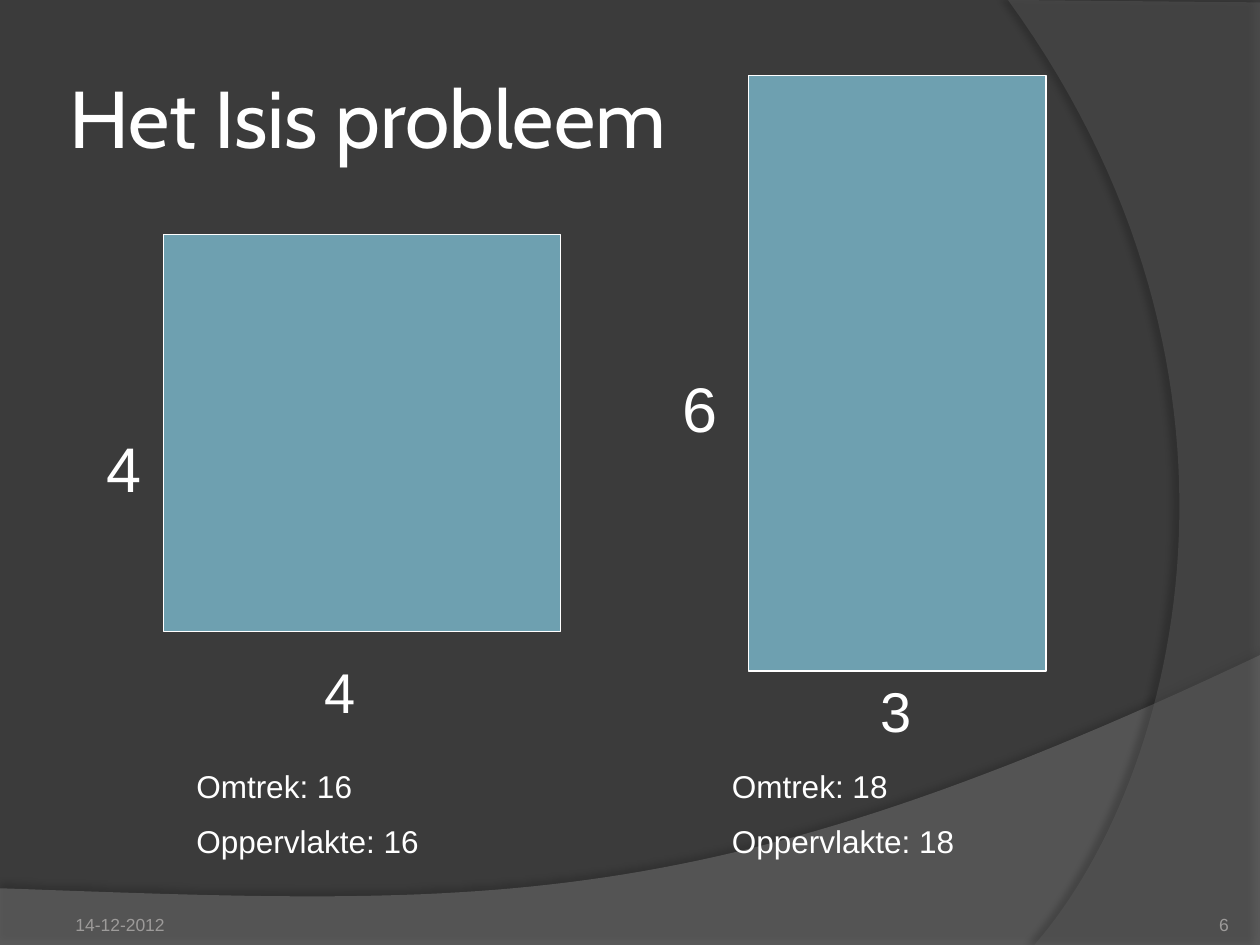
from dataclasses import dataclass

import pptx
import pptx.dml.color
import pptx.enum.shapes
import pptx.enum.text
import pptx.oxml
import pptx.oxml.ns
import pptx.util

Pt = pptx.util.Pt
RGB = pptx.dml.color.RGBColor.from_string
Anchor = pptx.enum.text.MSO_ANCHOR
Align = pptx.enum.text.PP_ALIGN
Point = tuple[float, float]


@dataclass(frozen=True)
class Theme:
    background: str = "3B3B3B"
    hill: str = "7F7F7F"
    arc: str = "5E5E5E"
    rect: str = "6EA0B0"
    text: str = "FFFFFF"
    muted: str = "9D9B9A"
    title_font: str = "Cabin"
    body_font: str = "Arial"
    title: float = 46
    side: float = 36
    base: float = 32
    body: float = 18
    footer: float = 10


@dataclass(frozen=True)
class Wave:
    color: str
    opacity: int
    start: Point
    corners: list[Point]
    controls: tuple[Point, Point]
    end: Point
    shadow_opacity: int
    shadow_distance: float
    shadow_angle: int


@dataclass(frozen=True)
class Label:
    lines: list[str]
    left: float
    top: float
    width: float
    height: float
    size: float
    color: str
    font: str
    insets: tuple[float, float, float, float] = (7.2, 3.6, 7.2, 3.6)
    anchor: Anchor = Anchor.TOP
    align: Align = Align.LEFT


@dataclass(frozen=True)
class Rectangle:
    """A rectangle in units, with the places of its labels in points."""
    width: int
    height: int
    left: float
    top: float
    base_label: Point
    side_label: Point
    facts_left: float


THEME = Theme()
WIDTH, HEIGHT = 720, 540
UNIT = 56.7  # one unit of the rectangles
FACTS_TOP = 434.9
PARAGRAPH_GAP = 9.5
CURVE_STEPS = 60

WAVES = [
    Wave(THEME.hill, 45, (0, 507.6), [(0, 540.5), (WIDTH, 540.5), (WIDTH, 374.4)],
         ((402.5, 524.9), (281.5, 517.7)), (0, 507.6), 35, 3.5, 270),
    Wave(THEME.arc, 40, (WIDTH, 1.4), [(WIDTH, HEIGHT), (591.1, HEIGHT)],
         ((673.2, 445.7), (733, 216)), (576, 0), 45, 4, 180),
]

RECTANGLES = [
    Rectangle(4, 4, 93.6, 133.9, (178.6, 372.2), (54, 241.9), 105.1),
    Rectangle(3, 6, 427.7, 43.2, (496.1, 383), (383, 207.4), 411.1),
]


def bezier(start: Point, wave: Wave) -> list[Point]:
    points = (start, *wave.controls, wave.end)
    curve = []
    for step in range(1, CURVE_STEPS + 1):
        t = step / CURVE_STEPS
        weights = ((1 - t) ** 3, 3 * t * (1 - t) ** 2, 3 * t * t * (1 - t), t ** 3)
        curve.append(tuple(sum(w * p[axis] for w, p in zip(weights, points))
                           for axis in (0, 1)))
    return curve


def draw_wave(s, wave: Wave) -> None:
    outline = wave.corners + bezier(wave.corners[-1], wave)
    builder = s.shapes.build_freeform(Pt(wave.start[0]), Pt(wave.start[1]))
    builder.add_line_segments([(Pt(x), Pt(y)) for x, y in outline], close=True)
    shape = builder.convert_to_shape()
    shape.line.fill.background()
    shape.fill.solid()
    shape.fill.fore_color.rgb = RGB(wave.color)

    # Transparency and soft shadow
    ns = pptx.oxml.ns
    color = shape.fill._xPr.find(ns.qn("a:solidFill"))[0]
    color.append(pptx.oxml.parse_xml(
        f'<a:alpha {ns.nsdecls("a")} val="{wave.opacity * 1000}"/>'))
    shape.shadow.inherit = False
    effects = shape._element.spPr.find(ns.qn("a:effectLst"))
    effects.append(pptx.oxml.parse_xml(
        f'<a:outerShdw {ns.nsdecls("a")} blurRad="{Pt(4)}" '
        f'dist="{Pt(wave.shadow_distance)}" dir="{wave.shadow_angle * 60000}" '
        f'algn="ctr" rotWithShape="0"><a:srgbClr val="000000">'
        f'<a:alpha val="{wave.shadow_opacity * 1000}"/></a:srgbClr></a:outerShdw>'))


def draw_label(s, label: Label) -> None:
    box = s.shapes.add_textbox(Pt(label.left), Pt(label.top),
                               Pt(label.width), Pt(label.height))
    tf = box.text_frame
    tf.word_wrap = True
    tf.vertical_anchor = label.anchor
    (tf.margin_left, tf.margin_top,
     tf.margin_right, tf.margin_bottom) = map(Pt, label.insets)
    tf.text = "\n".join(label.lines)
    for i, p in enumerate(tf.paragraphs):
        p.alignment = label.align
        p.space_before = Pt(PARAGRAPH_GAP if i else 0)
        p.font.name = label.font
        p.font.size = Pt(label.size)
        p.font.color.rgb = RGB(label.color)


def draw_rectangle(s, rect: Rectangle) -> None:
    shape = s.shapes.add_shape(
        pptx.enum.shapes.MSO_SHAPE.RECTANGLE, Pt(rect.left), Pt(rect.top),
        Pt(rect.width * UNIT), Pt(rect.height * UNIT))
    shape.shadow.inherit = False
    shape.fill.solid()
    shape.fill.fore_color.rgb = RGB(THEME.rect)
    shape.line.color.rgb = RGB(THEME.text)
    shape.line.width = Pt(0.75)

    facts = [f"Omtrek: {2 * (rect.width + rect.height)}",
             f"Oppervlakte: {rect.width * rect.height}"]
    for lines, place, width, height, size in (
        ([str(rect.width)], rect.base_label, 136, 45.4, THEME.base),
        ([str(rect.height)], rect.side_label, 136, 50.4, THEME.side),
        (facts, (rect.facts_left, FACTS_TOP), 250, 79.2, THEME.body),
    ):
        draw_label(s, Label(lines, *place, width, height, size,
                            THEME.text, THEME.body_font))


def main() -> None:
    prs = pptx.Presentation()
    prs.slide_width, prs.slide_height = Pt(WIDTH), Pt(HEIGHT)
    s = prs.slides.add_slide(prs.slide_layouts[6])

    # Background
    s.background.fill.solid()
    s.background.fill.fore_color.rgb = RGB(THEME.background)
    for wave in WAVES:
        draw_wave(s, wave)

    # Title and footer
    draw_label(s, Label(["Het Isis probleem"], 36, 21.6, 588, 90, THEME.title,
                        THEME.text, THEME.title_font, (3.6,) * 4, Anchor.MIDDLE))
    draw_label(s, Label(["14-12-2012"], 36, 505.4, 168, 28.8, THEME.footer,
                        THEME.muted, THEME.body_font, (7.2, 3.6, 7.2, 0),
                        Anchor.BOTTOM))
    draw_label(s, Label(["6"], 642.2, 505.4, 60, 28.8, THEME.footer,
                        THEME.muted, THEME.body_font, (0,) * 4,
                        Anchor.BOTTOM, Align.RIGHT))

    # Rectangles with their measures
    for rect in RECTANGLES:
        draw_rectangle(s, rect)

    prs.save("out.pptx")


if __name__ == "__main__":
    main()
